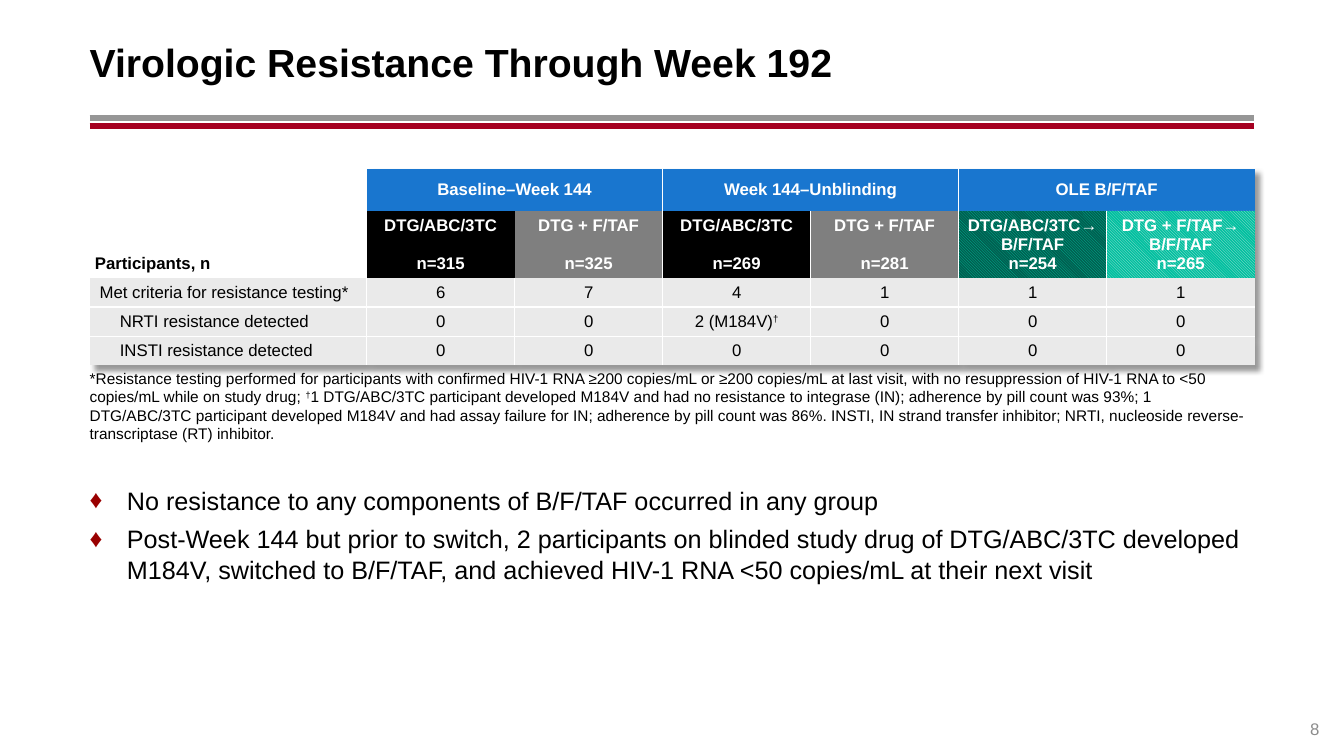
from lxml import etree
from pptx import Presentation
from pptx import util as u
from pptx.dml.color import RGBColor
from pptx.enum import dml, shapes, text
from pptx.oxml import parse_xml
from pptx.oxml.ns import nsdecls, qn

COLORS = {
    "black": "000000", "white": "FFFFFF", "rule_gray": "969696", "rule_red": "A50021",
    "blue": "1976CF", "gray": "7F7F7F", "body": "EAEAEA", "teal": "00C0A0",
    "dark_teal": "006050", "pale_teal": "B8E2D8", "bullet": "990000", "number": "8C8C8C",
}
LEFT, WIDTH = 2.26, 29.34
LABEL_WIDTH, VALUE_WIDTH = 6.98, 3.73
ROW_HEIGHTS = [0.73, 1.69, 0.73, 0.73, 0.73]
PLAIN_TABLE = "{2D5ABB26-0587-4C30-8999-92F81FD0307C}"

PERIODS = ["Baseline–Week 144", "Week 144–Unblinding", "OLE B/F/TAF"]
ARMS = [
    (["DTG/ABC/3TC", "n=315"], ["black"]),
    (["DTG + F/TAF", "n=325"], ["gray"]),
    (["DTG/ABC/3TC", "n=269"], ["black"]),
    (["DTG + F/TAF", "n=281"], ["gray"]),
    (["DTG/ABC/3TC→", "B/F/TAF", "n=254"], ["teal", "dark_teal"]),
    (["DTG + F/TAF→", "B/F/TAF", "n=265"], ["pale_teal", "teal"]),
]
RESULTS = [
    ("Met criteria for resistance testing*", ["6", "7", "4", "1", "1", "1"]),
    ("NRTI resistance detected", ["0", "0", "2 (M184V)†", "0", "0", "0"]),
    ("INSTI resistance detected", ["0"] * 6),
]
FOOTNOTE = (
    "*Resistance testing performed for participants with confirmed HIV-1 RNA ≥200 copies/mL "
    "or ≥200 copies/mL at last visit, with no resuppression of HIV-1 RNA to <50 copies/mL "
    "while on study drug; †1 DTG/ABC/3TC participant developed M184V and had no resistance to "
    "integrase (IN); adherence by pill count was 93%; 1 DTG/ABC/3TC participant developed M184V "
    "and had assay failure for IN; adherence by pill count was 86%. INSTI, IN strand transfer "
    "inhibitor; NRTI, nucleoside reverse-transcriptase (RT) inhibitor."
)
FINDINGS = [
    "No resistance to any components of B/F/TAF occurred in any group",
    "Post-Week 144 but prior to switch, 2 participants on blinded study drug of DTG/ABC/3TC "
    "developed M184V, switched to B/F/TAF, and achieved HIV-1 RNA <50 copies/mL at their next visit",
]


def rgb(name):
    return RGBColor.from_string(COLORS[name])


class SlideBuilder:
    font = "Arial"

    def __init__(self, slide):
        self.slide = slide

    def add_runs(self, paragraph, content, size=12, color="black", bold=False,
                 align=text.PP_ALIGN.LEFT):
        paragraph.alignment = align
        for piece in content.partition("†"):
            if not piece:
                continue
            run = paragraph.add_run()
            run.text = piece
            run.font.name = self.font
            run.font.size = u.Pt(size)
            run.font.bold = bold
            run.font.color.rgb = rgb(color)
            if piece == "†":
                run.font._element.set("baseline", "30000")

    def rule(self, top, color):
        line = self.slide.shapes.add_connector(
            shapes.MSO_CONNECTOR.STRAIGHT, u.Cm(LEFT), u.Cm(top), u.Cm(LEFT + WIDTH), u.Cm(top))
        line.line.color.rgb = rgb(color)
        line.line.width = u.Pt(4.25)
        etree.SubElement(line._element.spPr, qn("a:effectLst"))

    def text_box(self, box, paragraphs, inset=(0, 0, 0, 0), anchor=text.MSO_ANCHOR.TOP,
                 bulleted=False, **style):
        frame = self.slide.shapes.add_textbox(*map(u.Cm, box)).text_frame
        frame.word_wrap = True
        frame.vertical_anchor = anchor
        (frame.margin_left, frame.margin_top,
         frame.margin_right, frame.margin_bottom) = map(u.Cm, inset)
        for index, content in enumerate(paragraphs):
            paragraph = frame.add_paragraph() if index else frame.paragraphs[0]
            self.add_runs(paragraph, content, **style)
            if bulleted:
                self.bullet(paragraph)

    def bullet(self, paragraph):
        paragraph.space_before = u.Pt(6)
        properties = paragraph._p.get_or_add_pPr()
        properties.set("marL", str(u.Cm(0.94)))
        properties.set("indent", str(-u.Cm(0.94)))
        color = etree.SubElement(properties, qn("a:buClr"))
        etree.SubElement(color, qn("a:srgbClr"), val=COLORS["bullet"])
        etree.SubElement(properties, qn("a:buFont"), typeface=self.font)
        etree.SubElement(properties, qn("a:buChar"), char="♦")

    def table(self, top):
        columns = [LABEL_WIDTH] + [VALUE_WIDTH] * len(ARMS)
        frame = self.slide.shapes.add_table(
            len(ROW_HEIGHTS), len(columns), u.Cm(LEFT), u.Cm(top),
            u.Cm(sum(columns)), u.Cm(sum(ROW_HEIGHTS)))
        table = frame.table
        table.first_row = table.horz_banding = False
        for column, width in zip(table.columns, columns):
            column.width = u.Cm(width)
        for row, height in zip(table.rows, ROW_HEIGHTS):
            row.height = u.Cm(height)
        properties = table._tbl.tblPr
        properties.find(qn("a:tableStyleId")).text = PLAIN_TABLE
        properties.insert(0, parse_xml(
            f'<a:effectLst {nsdecls("a")}><a:outerShdw blurRad="50800" dist="50800" dir="2700000" '
            'algn="tl" rotWithShape="0"><a:srgbClr val="000000"><a:alpha val="40000"/></a:srgbClr>'
            '</a:outerShdw></a:effectLst>'))
        return table

    def cell(self, cell, paragraphs, fills=(), borders="", inset=0, indent=0,
             anchor=text.MSO_ANCHOR.MIDDLE, **style):
        cell.vertical_anchor = anchor
        cell.margin_left = cell.margin_right = u.Cm(inset)
        cell.margin_top = cell.margin_bottom = u.Cm(0.13)
        properties = cell._tc.get_or_add_tcPr()
        for side in borders:
            line = etree.SubElement(properties, qn(f"a:ln{side}"), w=str(u.Pt(1)))
            fill = etree.SubElement(line, qn("a:solidFill"))
            etree.SubElement(fill, qn("a:srgbClr"), val=COLORS["white"])
        if len(fills) == 2:
            cell.fill.patterned()
            cell.fill.pattern = dml.MSO_PATTERN.LIGHT_DOWNWARD_DIAGONAL
            cell.fill.fore_color.rgb, cell.fill.back_color.rgb = map(rgb, fills)
        elif fills:
            cell.fill.solid()
            cell.fill.fore_color.rgb = rgb(fills[0])
        else:
            cell.fill.background()
        for index, content in enumerate(paragraphs):
            paragraph = cell.text_frame.add_paragraph() if index else cell.text_frame.paragraphs[0]
            self.add_runs(paragraph, content, **style)
            if indent:
                paragraph._p.get_or_add_pPr().set("marL", str(u.Cm(indent)))
        if len(paragraphs) == 2:
            paragraph.space_before = u.Pt(13.8)


def fill_table(builder, table):
    center = text.PP_ALIGN.CENTER
    bottom = text.MSO_ANCHOR.BOTTOM
    heading = dict(color="white", bold=True, align=center)
    last_column, last_row = len(ARMS), len(ROW_HEIGHTS) - 1

    builder.cell(table.cell(0, 0), [])
    for index, period in enumerate(PERIODS):
        first = 1 + 2 * index
        table.cell(0, first).merge(table.cell(0, first + 1))
        borders = "L" * (index > 0) + "R" * (index < len(PERIODS) - 1)
        builder.cell(table.cell(0, first), [period], ["blue"], borders, **heading)

    builder.cell(table.cell(1, 0), ["Participants, n"], inset=0.13, anchor=bottom, bold=True)
    for column, (lines, fills) in enumerate(ARMS, 1):
        borders = "L" * (column in (3, 5)) + "R" * (column in (2, 4))
        builder.cell(table.cell(1, column), lines, fills, borders, anchor=bottom, **heading)

    for row, (label, values) in enumerate(RESULTS, 2):
        horizontal = "T" * (row > 2) + "B" * (row < last_row)
        builder.cell(table.cell(row, 0), [label], ["body"], "R" + horizontal, inset=0.25,
                     indent=0.51 * (row > 2))
        for column, value in enumerate(values, 1):
            borders = "L" + "R" * (column < last_column) + horizontal
            builder.cell(table.cell(row, column), [value], ["body"], borders, align=center)


def main():
    presentation = Presentation()
    presentation.slide_width, presentation.slide_height = u.Cm(33.87), u.Cm(19.05)
    builder = SlideBuilder(presentation.slides.add_slide(presentation.slide_layouts[6]))
    padding = (0, 0.13, 0.25, 0.13)

    builder.rule(2.97, "rule_gray")
    builder.rule(3.18, "rule_red")
    fill_table(builder, builder.table(4.27))
    builder.text_box((LEFT, 0.46, WIDTH, 2.18), ["Virologic Resistance Through Week 192"],
                     padding, text.MSO_ANCHOR.MIDDLE, size=28, bold=True)
    builder.text_box((LEFT, 12.09, WIDTH, 2.69), FINDINGS, padding, bulleted=True, size=18)
    builder.text_box((LEFT, 9.3, WIDTH, 2.36), [FOOTNOTE], size=11)
    builder.text_box((31.6, 17.6, 1.65, 1.02), ["8"], anchor=text.MSO_ANCHOR.BOTTOM,
                     color="number", align=text.PP_ALIGN.RIGHT)
    presentation.save("out.pptx")


if __name__ == "__main__":
    main()
